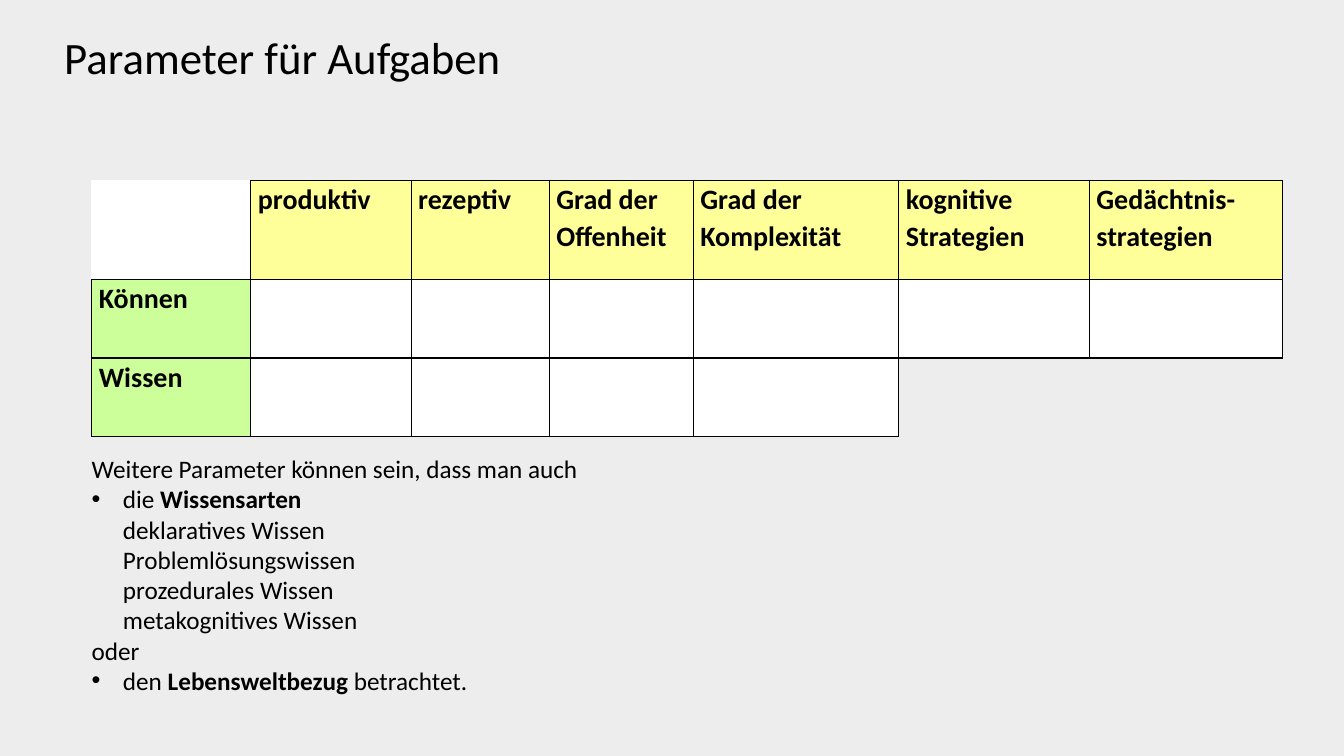
from lxml.etree import SubElement
from pptx import Presentation
from pptx.dml.color import RGBColor
from pptx.enum.text import MSO_ANCHOR
from pptx.oxml.ns import qn
from pptx.util import Cm, Pt

BLACK = RGBColor(0x00, 0x00, 0x00)
WHITE = RGBColor(0xFF, 0xFF, 0xFF)
GREY = RGBColor(0xED, 0xED, 0xED)
YELLOW = RGBColor(0xFF, 0xFF, 0x99)
GREEN = RGBColor(0xCC, 0xFF, 0x99)
FONT = "Calibri"

HEADINGS = ["", "produktiv", "rezeptiv", "Grad der Offenheit",
            "Grad der Komplexität", "kognitive Strategien",
            "Gedächtnis-strategien"]
ROW_LABELS = ["Können", "Wissen"]
COLUMN_WIDTHS = [4.01, 4.04, 3.48, 3.63, 5.18, 4.8, 4.88]
ROW_HEIGHTS = [2.49, 1.98, 1.98]
KNOWLEDGE_TYPES = ["deklaratives Wissen", "Problemlösungswissen",
                   "prozedurales Wissen", "metakognitives Wissen"]


def add_span(para, text, size, bold=False):
    """Append one formatted run to a paragraph."""
    span = para.add_run()
    span.text = text
    span.font.name = FONT
    span.font.size = Pt(size)
    span.font.bold = bold
    span.font.color.rgb = BLACK


def add_bullet(para):
    """Give a paragraph a hanging round bullet."""
    properties = para._p.get_or_add_pPr()
    properties.set("marL", str(Cm(0.79)))
    properties.set("indent", str(-Cm(0.79)))
    SubElement(properties, qn("a:buFont"), typeface="Arial")
    SubElement(properties, qn("a:buChar"), char="•")


def style_cell(cell, fill, left=BLACK, right=BLACK, top=BLACK, bottom=BLACK):
    """Set the borders and fill of a cell; a border of None is not drawn."""
    properties = cell._tc.get_or_add_tcPr()
    borders = {"a:lnL": left, "a:lnR": right, "a:lnT": top, "a:lnB": bottom}
    for tag, color in borders.items():
        line = SubElement(properties, qn(tag), w=str(Pt(1)))
        if color is None:
            SubElement(line, qn("a:noFill"))
        else:
            solid = SubElement(line, qn("a:solidFill"))
            SubElement(solid, qn("a:srgbClr"), val=str(color))
    cell.fill.solid()
    cell.fill.fore_color.rgb = fill


def write_cell(cell, text):
    """Write a bold label into a table cell."""
    cell.margin_left = cell.margin_right = Cm(0.18)
    cell.margin_top = cell.margin_bottom = 0
    para = cell.text_frame.paragraphs[0]
    para.line_spacing = 1.07
    para.space_after = Pt(4)
    add_span(para, text, 20, True)


def add_title(page, left, top, width, height):
    """Place the slide title in its box."""
    frame = page.shapes.add_textbox(left, top, width, height).text_frame
    frame.word_wrap = True
    frame.vertical_anchor = MSO_ANCHOR.MIDDLE
    para = frame.paragraphs[0]
    para.line_spacing = 0.9
    add_span(para, "Parameter für Aufgaben", 32)


def add_parameter_table(page, left, top):
    """Place the grid of task parameters with its open lower right corner."""
    table = page.shapes.add_table(
        len(ROW_HEIGHTS), len(COLUMN_WIDTHS), left, top,
        Cm(sum(COLUMN_WIDTHS)), Cm(sum(ROW_HEIGHTS))).table
    table.first_row = table.horz_banding = False
    for column, width in zip(table.columns, COLUMN_WIDTHS):
        column.width = Cm(width)
    for row, height in zip(table.rows, ROW_HEIGHTS):
        row.height = Cm(height)

    style_cell(table.cell(0, 0), WHITE, left=WHITE, top=WHITE)
    for index, heading in enumerate(HEADINGS[1:], 1):
        style_cell(table.cell(0, index), YELLOW)
        write_cell(table.cell(0, index), heading)
    for index, label in enumerate(ROW_LABELS, 1):
        style_cell(table.cell(index, 0), GREEN)
        write_cell(table.cell(index, 0), label)
        last = 7 if index == 1 else 5
        for column in range(1, last):
            style_cell(table.cell(index, column), WHITE)

    corner = table.cell(2, 5)
    corner.merge(table.cell(2, 6))
    style_cell(corner, GREY, right=None, bottom=None)
    style_cell(table.cell(2, 6), GREY, left=None, right=None, bottom=None)


def add_further_parameters(page, left, top, width, height):
    """Place the closing text with its two bullet points."""
    frame = page.shapes.add_textbox(left, top, width, height).text_frame
    frame.word_wrap = True
    add_span(frame.paragraphs[0],
             "Weitere Parameter können sein, dass man auch", 18)

    knowledge = frame.add_paragraph()
    add_bullet(knowledge)
    add_span(knowledge, "die ", 18)
    add_span(knowledge, "Wissensarten", 18, True)
    for name in KNOWLEDGE_TYPES:
        knowledge.add_line_break()
        add_span(knowledge, name, 18)

    add_span(frame.add_paragraph(), "oder", 18)

    relevance = frame.add_paragraph()
    add_bullet(relevance)
    add_span(relevance, "den ", 18)
    add_span(relevance, "Lebensweltbezug", 18, True)
    add_span(relevance, " betrachtet.", 18)


def main():
    """Build the slide and save the deck."""
    deck = Presentation()
    deck.slide_width, deck.slide_height = Cm(33.87), Cm(19.05)
    page = deck.slides.add_slide(deck.slide_layouts[6])
    page.background.fill.solid()
    page.background.fill.fore_color.rgb = GREY
    add_title(page, Cm(1.37), Cm(0.71), Cm(30), Cm(1.6))
    add_parameter_table(page, Cm(2.31), Cm(4.55))
    add_further_parameters(page, Cm(2.06), Cm(11.3), Cm(29.74), Cm(6.4))
    deck.save("out.pptx")


if __name__ == "__main__":
    main()
